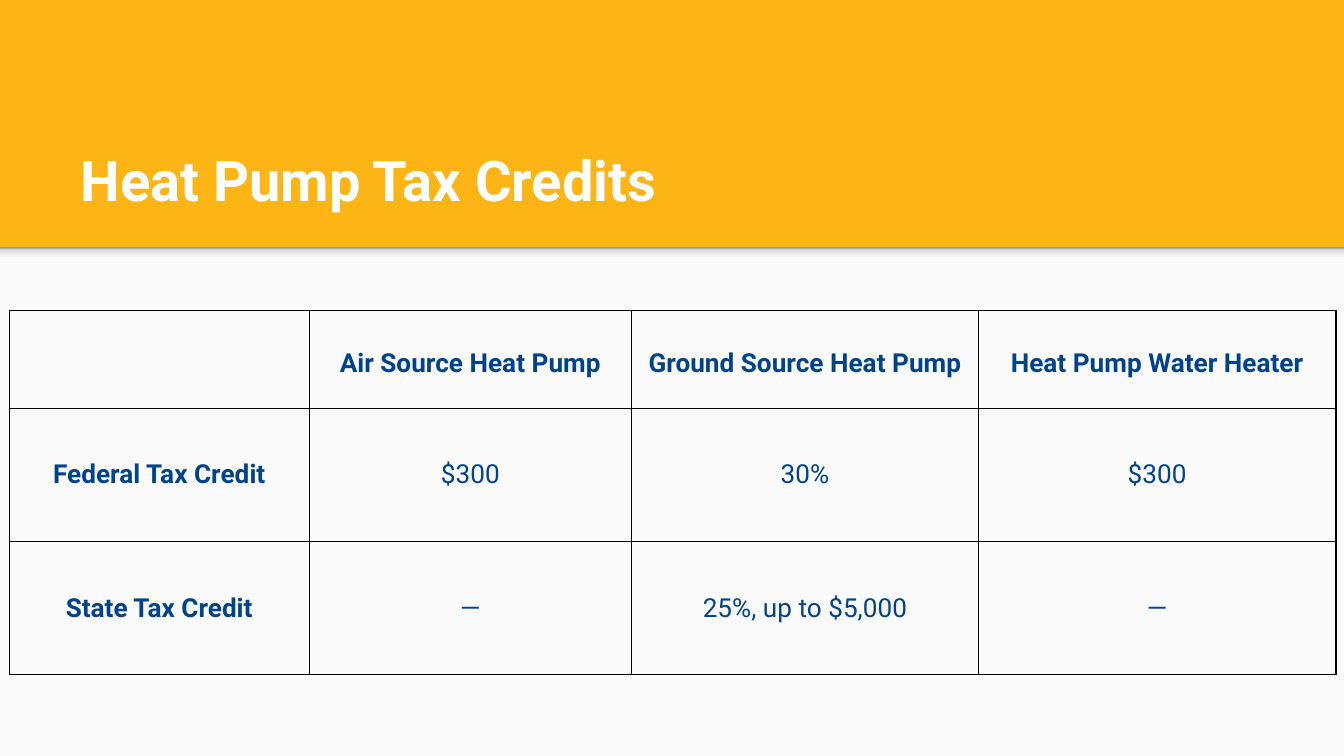
from lxml import etree
from pptx import Presentation
from pptx.dml.color import RGBColor
from pptx.enum.shapes import MSO_SHAPE as Shape
from pptx.enum.text import MSO_ANCHOR as Anchor, PP_ALIGN as Align
from pptx.oxml import parse_xml
from pptx.oxml.ns import nsdecls, qn
from pptx.util import Inches, Pt

GOLD = RGBColor(0xFD, 0xB5, 0x15)
PAPER = RGBColor(0xFA, 0xFA, 0xFA)
WHITE = RGBColor(0xFF, 0xFF, 0xFF)
NAVY = RGBColor(0x00, 0x43, 0x8C)
BLACK = RGBColor(0x00, 0x00, 0x00)
SHADE_STOPS = [
    (0, RGBColor(0xF9, 0xF9, 0xF9)),
    (36, RGBColor(0xF9, 0xF9, 0xF9)),
    (80, RGBColor(0xDE, 0xDE, 0xDE)),
    (100, RGBColor(0x99, 0x99, 0x99)),
]
FONT = "Roboto"
WIDTH = 10
HEIGHT = WIDTH * 9 / 16
BAND_HEIGHT = 1.84

CREDITS = [
    ["", "Air Source Heat Pump", "Ground Source Heat Pump", "Heat Pump Water Heater"],
    ["Federal Tax Credit", "$300", "30%", "$300"],
    ["State Tax Credit", "—", "25%, up to $5,000", "—"],
]
COLUMN_WIDTHS = [2.23, 2.4, 2.58, 2.66]
ROW_HEIGHTS = [0.73, 0.99, 0.99]


def style_font(font, size, color, bold):
    font.name = FONT
    font.size = Pt(size)
    font.bold = bold
    font.color.rgb = color


def add_rectangle(slide, left, top, width, height):
    shape = slide.shapes.add_shape(
        Shape.RECTANGLE, Inches(left), Inches(top), Inches(width), Inches(height))
    shape.shadow.inherit = False
    shape.line.fill.background()
    shape.fill.solid()
    shape.fill.fore_color.rgb = PAPER
    return shape


def shade_upward(shape):
    stops = "".join(
        f'<a:gs pos="{percent * 1000}"><a:srgbClr val="{color}"/></a:gs>'
        for percent, color in SHADE_STOPS)
    gradient = parse_xml(
        f'<a:gradFill {nsdecls("a")}><a:gsLst>{stops}</a:gsLst>'
        '<a:lin ang="16200000" scaled="0"/></a:gradFill>')
    properties = shape.element.spPr
    properties.replace(properties.find(qn("a:solidFill")), gradient)


def add_panel(slide, left, top, width, height):
    add_rectangle(slide, left, top, width, height)
    shade_upward(add_rectangle(slide, left, top, width, 0.12))


def place_title(slide, text, left, top, width, height):
    title = slide.shapes.title
    title.left, title.top = Inches(left), Inches(top)
    title.width, title.height = Inches(width), Inches(height)
    frame = title.text_frame
    frame.text = text
    frame.word_wrap = True
    frame.vertical_anchor = Anchor.BOTTOM
    frame.margin_left = frame.margin_right = Inches(0.1)
    frame.margin_top = frame.margin_bottom = Inches(0.1)
    paragraph = frame.paragraphs[0]
    paragraph.alignment = Align.LEFT
    style_font(paragraph.runs[0].font, 30, WHITE, True)


def set_borders(cell):
    properties = cell._tc.get_or_add_tcPr()
    for position, side in enumerate(("lnL", "lnR", "lnT", "lnB")):
        line = etree.Element(qn(f"a:{side}"), w=str(Pt(0.75)))
        fill = etree.SubElement(line, qn("a:solidFill"))
        etree.SubElement(fill, qn("a:srgbClr"), val=str(BLACK))
        properties.insert(position, line)


def fill_cell(cell, text, is_header, is_bold):
    cell.fill.background()
    set_borders(cell)
    cell.margin_left = cell.margin_right = Inches(0.1)
    cell.margin_top = Inches(0.28 if is_header else 0.05)
    cell.margin_bottom = Inches(0.05)
    cell.vertical_anchor = Anchor.TOP if is_header else Anchor.MIDDLE
    cell.text_frame.text = text
    paragraph = cell.text_frame.paragraphs[0]
    paragraph.alignment = Align.CENTER
    for run in paragraph.runs:
        style_font(run.font, 14, NAVY, is_bold)


def add_credit_table(slide, left, top):
    table = slide.shapes.add_table(
        len(ROW_HEIGHTS), len(COLUMN_WIDTHS), Inches(left), Inches(top),
        Inches(sum(COLUMN_WIDTHS)), Inches(sum(ROW_HEIGHTS))).table
    table.first_row = table.horz_banding = False
    for column, width in zip(table.columns, COLUMN_WIDTHS):
        column.width = Inches(width)
    for row, height in zip(table.rows, ROW_HEIGHTS):
        row.height = Inches(height)
    for row_index, texts in enumerate(CREDITS):
        for column_index, text in enumerate(texts):
            is_header = row_index == 0
            fill_cell(table.cell(row_index, column_index), text,
                      is_header, is_header or column_index == 0)


def main():
    presentation = Presentation()
    presentation.slide_width = Inches(WIDTH)
    presentation.slide_height = Inches(HEIGHT)
    slide = presentation.slides.add_slide(presentation.slide_layouts[5])
    slide.background.fill.solid()
    slide.background.fill.fore_color.rgb = GOLD
    add_panel(slide, 0, BAND_HEIGHT, WIDTH, HEIGHT - BAND_HEIGHT)
    place_title(slide, "Heat Pump Tax Credits", 0.5, 0.84, 8.99, 0.84)
    add_credit_table(slide, 0.07, 2.31)
    presentation.save("out.pptx")


if __name__ == "__main__":
    main()
